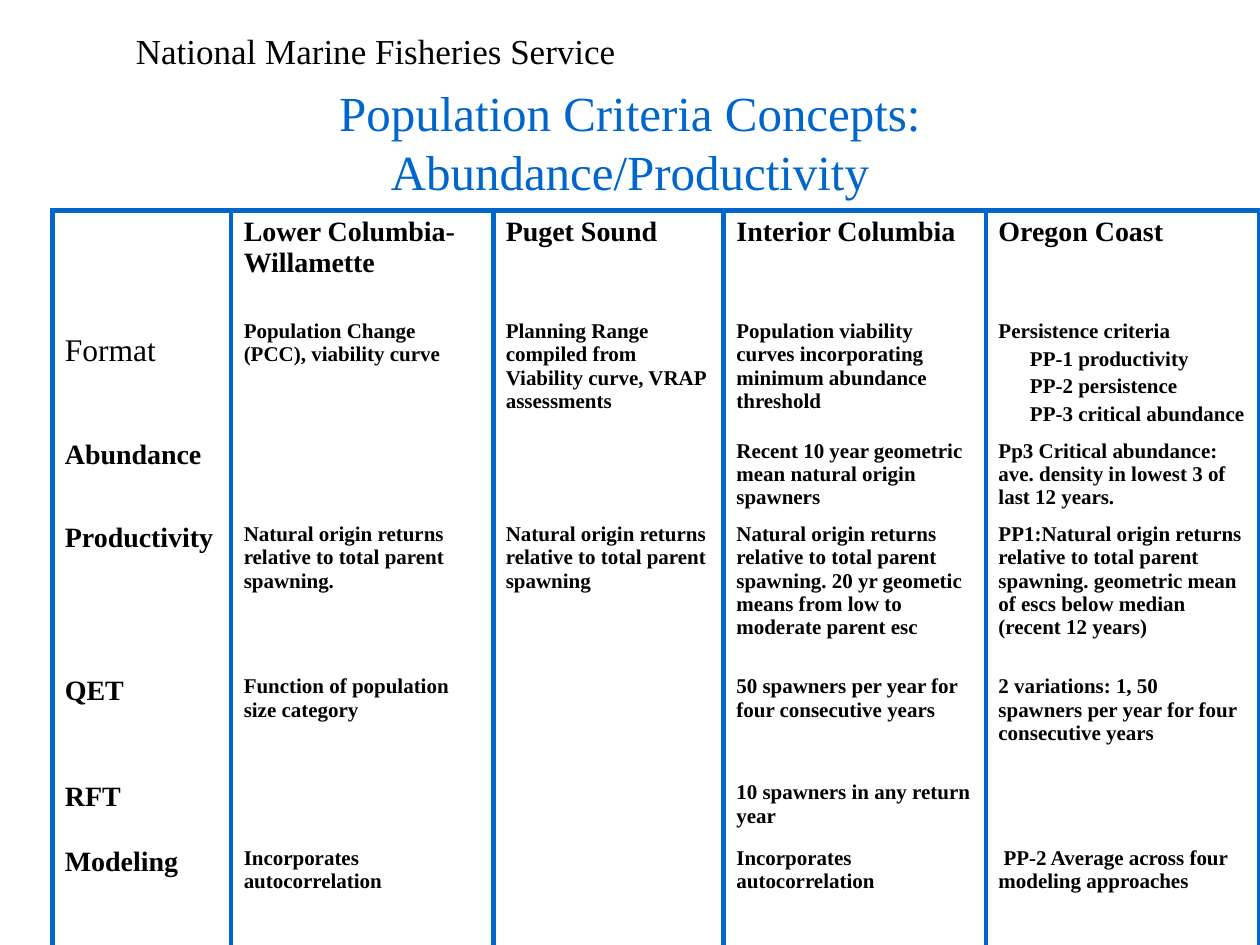
from dataclasses import dataclass
from typing import NamedTuple

from lxml.etree import SubElement
from pptx import Presentation
from pptx.dml.color import RGBColor
from pptx.enum.text import MSO_ANCHOR, PP_ALIGN
from pptx.oxml.ns import qn
from pptx.util import Emu, Inches, Pt

SLIDE_WIDTH, SLIDE_HEIGHT = Inches(10), Inches(7.5)


@dataclass(frozen=True)
class Theme:
    font: str = "Times New Roman"
    ink: str = "000000"
    accent: str = "0066CC"
    agency_size: int = 20
    title_size: int = 28
    format_size: int = 18
    label_size: int = 16
    body_size: int = 12
    rule_width: int = 3
    space_share: float = 0.2


class Frame(NamedTuple):
    """A place given as shares of the slide's width and height."""
    left: float
    top: float
    width: float
    height: float

    def emu(self) -> tuple[Emu, ...]:
        return (Emu(round(self.left * SLIDE_WIDTH)), Emu(round(self.top * SLIDE_HEIGHT)),
                Emu(round(self.width * SLIDE_WIDTH)), Emu(round(self.height * SLIDE_HEIGHT)))


class Line(NamedTuple):
    text: str
    left_indent: float = 0
    first_indent: float = 0


class Criterion(NamedTuple):
    label: str
    height: float
    entries: tuple[tuple[Line, ...], ...]
    label_size: int
    entry_size: int
    label_bold: bool = True
    label_top: float = 0.05
    entry_top: float = 0.05


THEME = Theme()
COLUMN_WIDTHS = (1.42, 2.08, 1.83, 2.08, 2.17)
EMPTY: tuple[Line, ...] = ()


def single(text: str) -> tuple[Line, ...]:
    return (Line(text),)


def criterion(label: str, height: float, *entries: tuple[Line, ...], **options) -> Criterion:
    sizes = {"label_size": THEME.label_size, "entry_size": THEME.body_size}
    return Criterion(label, height, entries, **(sizes | options))


RETURNS = "Natural origin returns relative to total parent spawning"
AUTOCORRELATION = single("Incorporates autocorrelation")
CRITERIA = (
    criterion("", 0.6, single("Lower Columbia-Willamette"), single("Puget Sound"),
              single("Interior Columbia"), single("Oregon Coast"),
              entry_size=THEME.label_size),
    criterion("Format", 1.15,
              single("Population Change (PCC), viability curve"),
              single("Planning Range compiled from Viability curve, VRAP assessments"),
              single("Population viability curves incorporating minimum abundance threshold"),
              (Line("Persistence criteria"), Line("PP-1 productivity", 0.25),
               Line("PP-2 persistence", 0.25), Line("PP-3 critical abundance", 0.25)),
              label_size=THEME.format_size, label_bold=False,
              label_top=0.38, entry_top=0.27),
    criterion("Abundance", 0.66, EMPTY, EMPTY,
              single("Recent 10 year geometric mean natural origin spawners"),
              single("Pp3 Critical abundance: ave. density in lowest 3 of last 12 years.")),
    criterion("Productivity", 1.21, single(RETURNS + "."), single(RETURNS),
              single(RETURNS + ". 20 yr geometic means from low to moderate parent esc"),
              single("PP1:" + RETURNS
                     + ". geometric mean of escs below median (recent 12 years)")),
    criterion("QET", 0.84, single("Function of population size category"), EMPTY,
              single("50 spawners per year for four consecutive years"),
              single("2 variations: 1, 50 spawners per year for four consecutive years")),
    criterion("RFT", 0.52, EMPTY, EMPTY, single("10 spawners in any return year"), EMPTY),
    criterion("Modeling", 1.33, AUTOCORRELATION, EMPTY, AUTOCORRELATION,
              (Line("PP-2 Average across four modeling approaches", 0, 0.04),)),
)


def add_run(paragraph, text: str, size: int, color: str, bold: bool = False) -> None:
    run = paragraph.add_run()
    run.text = text
    run.font.name = THEME.font
    run.font.size = Pt(size)
    run.font.bold = bold
    run.font.color.rgb = RGBColor.from_string(color)


def add_heading(slide, frame: Frame, text: str, size: int, color: str,
                align: PP_ALIGN, wrap: bool) -> None:
    text_frame = slide.shapes.add_textbox(*frame.emu()).text_frame
    text_frame.word_wrap = wrap
    text_frame.vertical_anchor = MSO_ANCHOR.MIDDLE
    paragraph = text_frame.paragraphs[0]
    paragraph.alignment = align
    add_run(paragraph, text, size, color)


def fill_cell(cell, lines: tuple[Line, ...], size: int, bold: bool, top: float) -> None:
    cell.margin_top = Inches(top)
    cell.margin_bottom = 0
    for index, line in enumerate(lines):
        if index:
            paragraph = cell.text_frame.add_paragraph()
            paragraph.space_before = Pt(size * THEME.space_share)
        else:
            paragraph = cell.text_frame.paragraphs[0]
        properties = paragraph._p.get_or_add_pPr()
        properties.set("marL", str(Inches(line.left_indent)))
        properties.set("indent", str(Inches(line.first_indent)))
        add_run(paragraph, line.text, size, THEME.ink, bold)


def rule_cell(cell, first_row: bool, last_row: bool) -> None:
    """Rule both sides of a cell, and the outer edge of the first and last rows."""
    properties = cell._tc.get_or_add_tcPr()
    edges = {"a:lnL": True, "a:lnR": True, "a:lnT": first_row, "a:lnB": last_row}
    for tag, ruled in edges.items():
        edge = SubElement(properties, qn(tag), w=str(Pt(THEME.rule_width)))
        if ruled:
            color = SubElement(SubElement(edge, qn("a:solidFill")), qn("a:srgbClr"))
            color.set("val", THEME.accent)
        else:
            SubElement(edge, qn("a:noFill"))
    cell.fill.background()


def add_criteria_table(slide, frame: Frame) -> None:
    table = slide.shapes.add_table(len(CRITERIA), len(COLUMN_WIDTHS), *frame.emu()).table
    table.first_row = table.horz_banding = False
    for column, width in zip(table.columns, COLUMN_WIDTHS):
        column.width = Inches(width)
    for index, (row, item) in enumerate(zip(table.rows, CRITERIA)):
        row.height = Inches(item.height)
        label, *entries = row.cells
        fill_cell(label, single(item.label) if item.label else EMPTY,
                  item.label_size, item.label_bold, item.label_top)
        for cell, lines in zip(entries, item.entries):
            fill_cell(cell, lines, item.entry_size, True, item.entry_top)
        for cell in row.cells:
            rule_cell(cell, index == 0, index == len(CRITERIA) - 1)


def main() -> None:
    presentation = Presentation()
    presentation.slide_width, presentation.slide_height = SLIDE_WIDTH, SLIDE_HEIGHT
    slide = presentation.slides.add_slide(presentation.slide_layouts[6])
    add_heading(slide, Frame(0.098, 0.024, 0.436, 0.058), "National Marine Fisheries Service",
                THEME.agency_size, THEME.ink, PP_ALIGN.LEFT, False)
    add_heading(slide, Frame(0.075, 0.066, 0.85, 0.167),
                "Population Criteria Concepts: Abundance/Productivity",
                THEME.title_size, THEME.accent, PP_ALIGN.CENTER, True)
    add_criteria_table(slide, Frame(0.0415, 0.2225, 0.958, 0.841))
    presentation.save("out.pptx")


if __name__ == "__main__":
    main()
